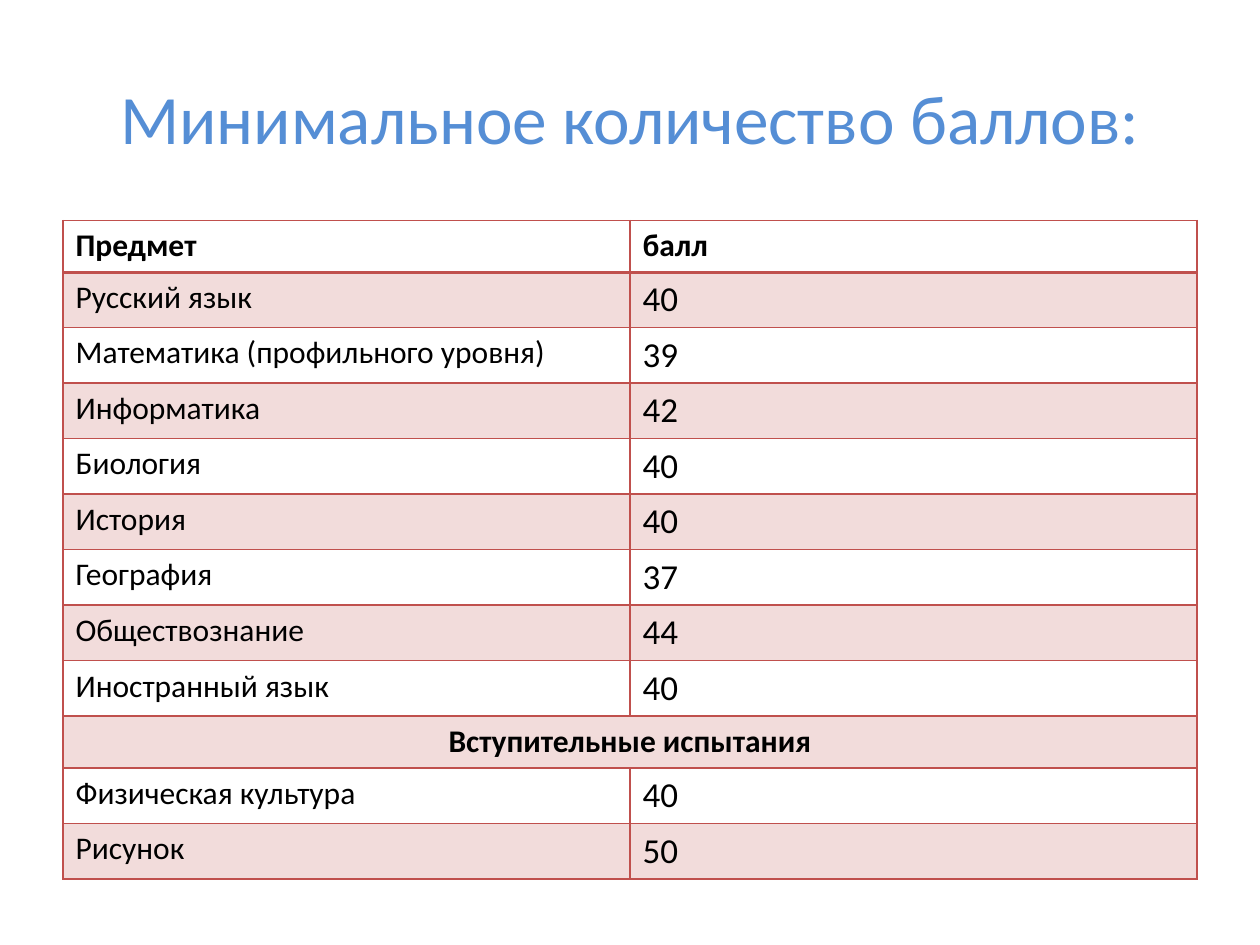
from dataclasses import dataclass

from lxml import etree
from pptx import Presentation
from pptx.dml.color import RGBColor
from pptx.enum.text import MSO_ANCHOR, PP_ALIGN
from pptx.oxml.ns import qn
from pptx.util import Inches, Pt

CENTER = PP_ALIGN.CENTER
LEFT = PP_ALIGN.LEFT
MIDDLE = MSO_ANCHOR.MIDDLE
TITLE_ONLY = 5

TITLE = "Минимальное количество баллов:"
HEADER = ("Предмет", "балл")
SECTION = "Вступительные испытания"
EXAM_SCORES = [
    ("Русский язык", "40"),
    ("Математика (профильного уровня)", "39"),
    ("Информатика", "42"),
    ("Биология", "40"),
    ("История", "40"),
    ("География", "37"),
    ("Обществознание", "44"),
    ("Иностранный язык", "40"),
]
ENTRANCE_SCORES = [("Физическая культура", "40"), ("Рисунок", "50")]


@dataclass(frozen=True)
class Theme:
    font: str = "Calibri"
    title_color: str = "558ED5"
    text_color: str = "000000"
    border_color: str = "C0504D"
    band_color: str = "F2DCDB"
    title_size: float = 39.6
    subject_size: float = 18
    score_size: float = 20
    border_width: float = 1
    header_rule_width: float = 2


class SlideBuilder:
    def __init__(self, presentation, theme):
        self.theme = theme
        self.width = presentation.slide_width
        self.height = presentation.slide_height
        layout = presentation.slide_layouts[TITLE_ONLY]
        self.slide = presentation.slides.add_slide(layout)

    def box(self, left, top, width, height):
        return (
            int(left * self.width),
            int(top * self.height),
            int(width * self.width),
            int(height * self.height),
        )

    def add_text(self, text_frame, text, size, color, bold=False, align=LEFT):
        paragraph = text_frame.paragraphs[0]
        paragraph.alignment = align
        run = paragraph.add_run()
        run.text = text
        run.font.name = self.theme.font
        run.font.size = Pt(size)
        run.font.bold = bold
        run.font.color.rgb = RGBColor.from_string(color)

    def title(self, text, box):
        shape = self.slide.shapes.title
        shape.left, shape.top, shape.width, shape.height = self.box(*box)
        shape.text_frame.vertical_anchor = MIDDLE
        self.add_text(shape.text_frame, text, self.theme.title_size,
                      self.theme.title_color, align=CENTER)

    def borders(self, cell, top, bottom):
        properties = cell._tc.get_or_add_tcPr()
        side = self.theme.border_width
        for tag, width in (("lnL", side), ("lnR", side), ("lnT", top), ("lnB", bottom)):
            line = etree.SubElement(properties, qn(f"a:{tag}"), w=str(Pt(width)))
            fill = etree.SubElement(line, qn("a:solidFill"))
            etree.SubElement(fill, qn("a:srgbClr"), val=self.theme.border_color)

    def cell(self, cell, row, text, size, bold, align):
        thin, thick = self.theme.border_width, self.theme.header_rule_width
        self.borders(cell, thick if row == 1 else thin, thick if row == 0 else thin)
        if row % 2:
            cell.fill.solid()
            cell.fill.fore_color.rgb = RGBColor.from_string(self.theme.band_color)
        else:
            cell.fill.background()
        if text:
            self.add_text(cell.text_frame, text, size, self.theme.text_color, bold, align)

    def score_table(self, rows, box):
        column_count = len(HEADER)
        frame = self.slide.shapes.add_table(len(rows), column_count, *self.box(*box))
        table = frame.table
        table.first_row = False
        table.horz_banding = False
        for row_index, values in enumerate(rows):
            is_section = len(values) == 1
            bold = is_section or values == HEADER
            align = CENTER if is_section else LEFT
            if is_section:
                table.cell(row_index, 0).merge(table.cell(row_index, column_count - 1))
            for column in range(column_count):
                text = values[column] if column < len(values) else ""
                is_score = column == 1 and not bold
                size = self.theme.score_size if is_score else self.theme.subject_size
                self.cell(table.cell(row_index, column), row_index, text, size, bold, align)


def main():
    presentation = Presentation()
    presentation.slide_width = Inches(10)
    presentation.slide_height = Inches(7.5)
    builder = SlideBuilder(presentation, Theme())
    builder.title(TITLE, (0.05, 0.04, 0.9, 1 / 6))
    rows = [HEADER, *EXAM_SCORES, (SECTION,), *ENTRANCE_SCORES]
    row_share = 0.41 / 7.5
    builder.score_table(rows, (0.05, 1.75 / 7.5, 0.9, row_share * len(rows)))
    presentation.save("out.pptx")


if __name__ == "__main__":
    main()
